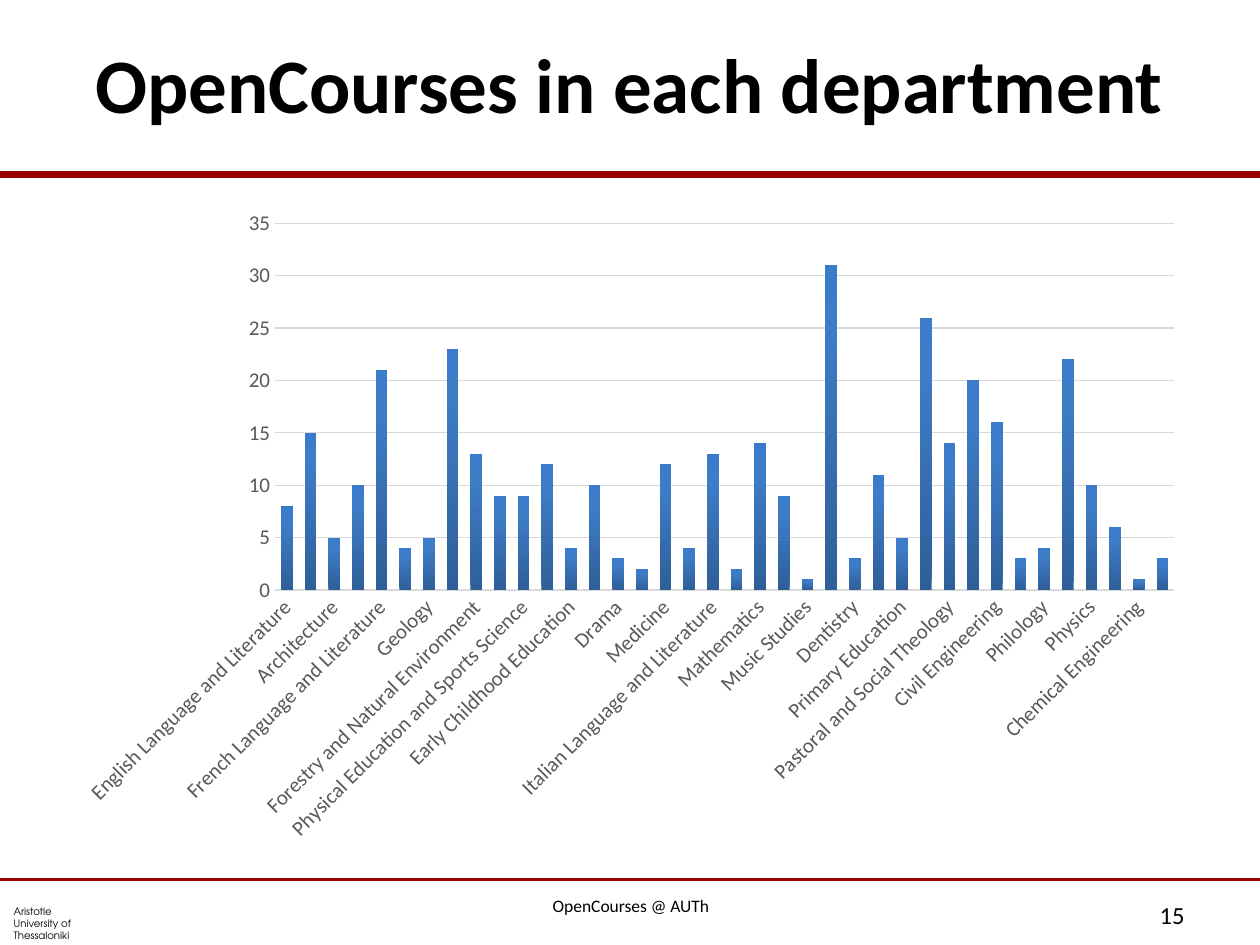
from copy import deepcopy

from lxml.etree import SubElement
from pptx import Presentation
from pptx.chart.data import CategoryChartData
from pptx.dml.color import RGBColor
from pptx.enum.chart import XL_CHART_TYPE, XL_TICK_MARK
from pptx.enum.shapes import MSO_CONNECTOR
from pptx.enum.text import MSO_ANCHOR, PP_ALIGN
from pptx.oxml.ns import qn
from pptx.util import Pt

COLORS = {
    "text": "000000",
    "rule": "990000",
    "label": "595959",
    "grid": "D9D9D9",
    "bar_dark": "2F5F99",
    "bar_mid": "3D7CC7",
    "bar_light": "3A7CCB",
}

COURSES = [
    ("English Language and Literature", 8),
    ("Rural and Surveying Engineering", 15),
    ("Architecture", 5),
    ("Biology", 10),
    ("French Language and Literature", 21),
    ("German Language and Literature", 4),
    ("Geology", 5),
    ("Agriculture", 23),
    ("Forestry and Natural Environment", 13),
    ("Journalism and Mass Communications", 9),
    ("Physical Education and Sports Science", 9),
    ("Physical Education and Sports Science in Serres", 12),
    ("Early Childhood Education", 4),
    ("Electrical and Computer Engineering", 10),
    ("Drama", 3),
    ("Theology", 2),
    ("Medicine", 12),
    ("History and Archaeology", 4),
    ("Italian Language and Literature", 13),
    ("Veterinary Medicine", 2),
    ("Mathematics", 14),
    ("Mechanical Engineering", 9),
    ("Music Studies", 1),
    ("Law", 31),
    ("Dentistry", 3),
    ("Economics", 11),
    ("Primary Education", 5),
    ("Informatics", 26),
    ("Pastoral and Social Theology", 14),
    ("Political Sciences", 20),
    ("Civil Engineering", 16),
    ("Pharmacy", 3),
    ("Philology", 4),
    ("Philosophy and Education", 22),
    ("Physics", 10),
    ("Chemistry", 6),
    ("Chemical Engineering", 1),
    ("Psychology", 3),
]


def color(name):
    return RGBColor.from_string(COLORS[name])


def style_font(font, size, name="Calibri", fill="text", bold=False):
    font.size, font.name, font.bold = Pt(size), name, bold
    font.color.rgb = color(fill)


def write_text(shape, text, align=PP_ALIGN.LEFT, anchor=MSO_ANCHOR.MIDDLE,
               spacing=None, inset=3.6, **font_format):
    frame = shape.text_frame
    frame.word_wrap = True
    frame.vertical_anchor = anchor
    frame.margin_top = frame.margin_bottom = Pt(inset)
    paragraph = frame.paragraphs[0]
    paragraph.alignment = align
    paragraph.line_spacing = spacing
    run = paragraph.add_run()
    run.text = text
    style_font(run.font, **font_format)


def add_label(slide, box, text, **text_format):
    label = slide.shapes.add_textbox(*map(Pt, box))
    write_text(label, text, **text_format)


def add_title(slide, box, text, **text_format):
    title = slide.shapes.title
    title.left, title.top, title.width, title.height = map(Pt, box)
    write_text(title, text, **text_format)


def add_rule(slide, y, weight):
    rule = slide.shapes.add_connector(
        MSO_CONNECTOR.STRAIGHT, Pt(0), Pt(y), Pt(720), Pt(y))
    rule.line.color.rgb = color("rule")
    rule.line.width = Pt(weight)
    SubElement(rule._element.spPr, qn("a:effectLst"))


def fill_bars(series):
    fill = series.format.fill
    fill.gradient()
    fill.gradient_angle = 90
    bottom, middle = fill.gradient_stops
    bottom.position, middle.position = 0, 0.8
    bottom.color.rgb, middle.color.rgb = color("bar_dark"), color("bar_mid")
    # A third stop is added next to the two default ones
    middle_xml = list(series._element.iter(qn("a:gs")))[-1]
    middle_xml.addnext(deepcopy(middle_xml))
    top = fill.gradient_stops[2]
    top.position = 1
    top.color.rgb = color("bar_light")


def add_course_chart(slide, box):
    data = CategoryChartData()
    data.categories = [department for department, _ in COURSES]
    data.add_series("Series 1", [count for _, count in COURSES])
    chart = slide.shapes.add_chart(
        XL_CHART_TYPE.COLUMN_CLUSTERED, *map(Pt, box), data).chart
    chart.has_legend = chart.has_title = False
    style_font(chart.font, 10)

    # Bars
    plot = chart.plots[0]
    plot.vary_by_categories = False
    plot.gap_width, plot.overlap = 100, -24
    fill_bars(plot.series[0])

    # Axes
    departments, counts = chart.category_axis, chart.value_axis
    for axis in (departments, counts):
        axis.major_tick_mark = axis.minor_tick_mark = XL_TICK_MARK.NONE
        style_font(axis.tick_labels.font, 12, fill="label")
    departments.format.line.color.rgb = color("grid")
    departments.format.line.width = Pt(1)
    label_body = departments._element.find(qn("c:txPr")).find(qn("a:bodyPr"))
    label_body.set("rot", "-2700000")
    label_body.set("vert", "horz")
    counts.minimum_scale, counts.maximum_scale = 0, 35
    counts.major_unit = 5
    counts.format.line.fill.background()
    grid = counts.major_gridlines.format.line
    grid.color.rgb = color("grid")
    grid.width = Pt(0.75)


def main():
    deck = Presentation()
    deck.slide_width, deck.slide_height = Pt(720), Pt(540)
    slide = deck.slides.add_slide(deck.slide_layouts[5])

    # Rules below the title and above the footer
    add_rule(slide, 100, 4)
    add_rule(slide, 502.5, 2)

    # Footer
    add_label(slide, (0.7, 515.5, 57, 24.5),
              "Aristotle University of Thessaloniki",
              size=5.8, name="TeX Gyre Adventor")
    add_label(slide, (247, 497, 227, 43), "OpenCourses @ AUTh", size=10,
              align=PP_ALIGN.CENTER, anchor=MSO_ANCHOR.TOP,
              spacing=2.2, inset=0)
    add_label(slide, (516, 508.5, 168, 28.8), "15", size=14,
              align=PP_ALIGN.RIGHT)

    # Title and chart
    add_title(slide, (36, 2, 648, 90), "OpenCourses in each department",
              size=44, bold=True, align=PP_ALIGN.CENTER)
    add_course_chart(slide, (36, 113, 648, 375))

    deck.save("out.pptx")


if __name__ == "__main__":
    main()
